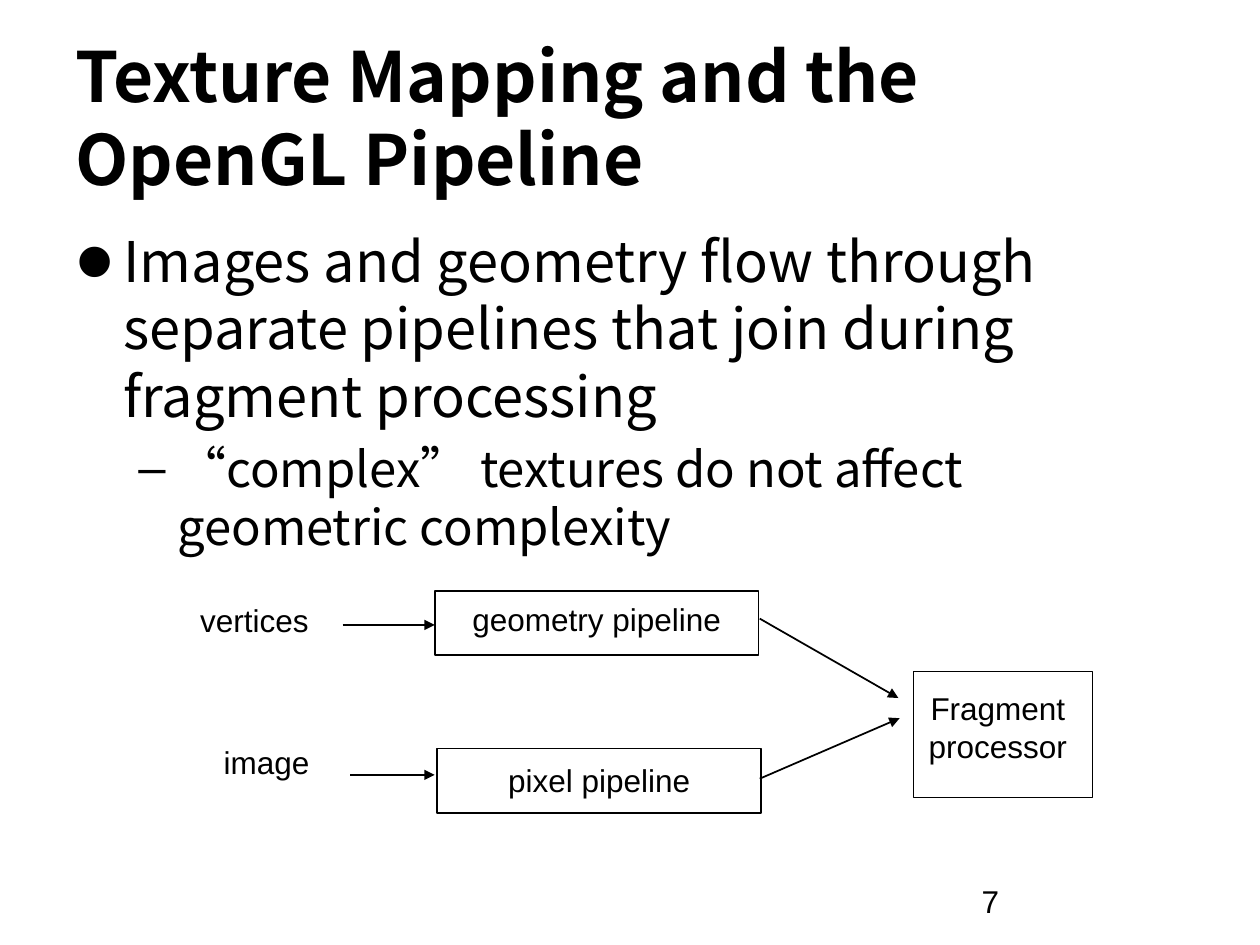
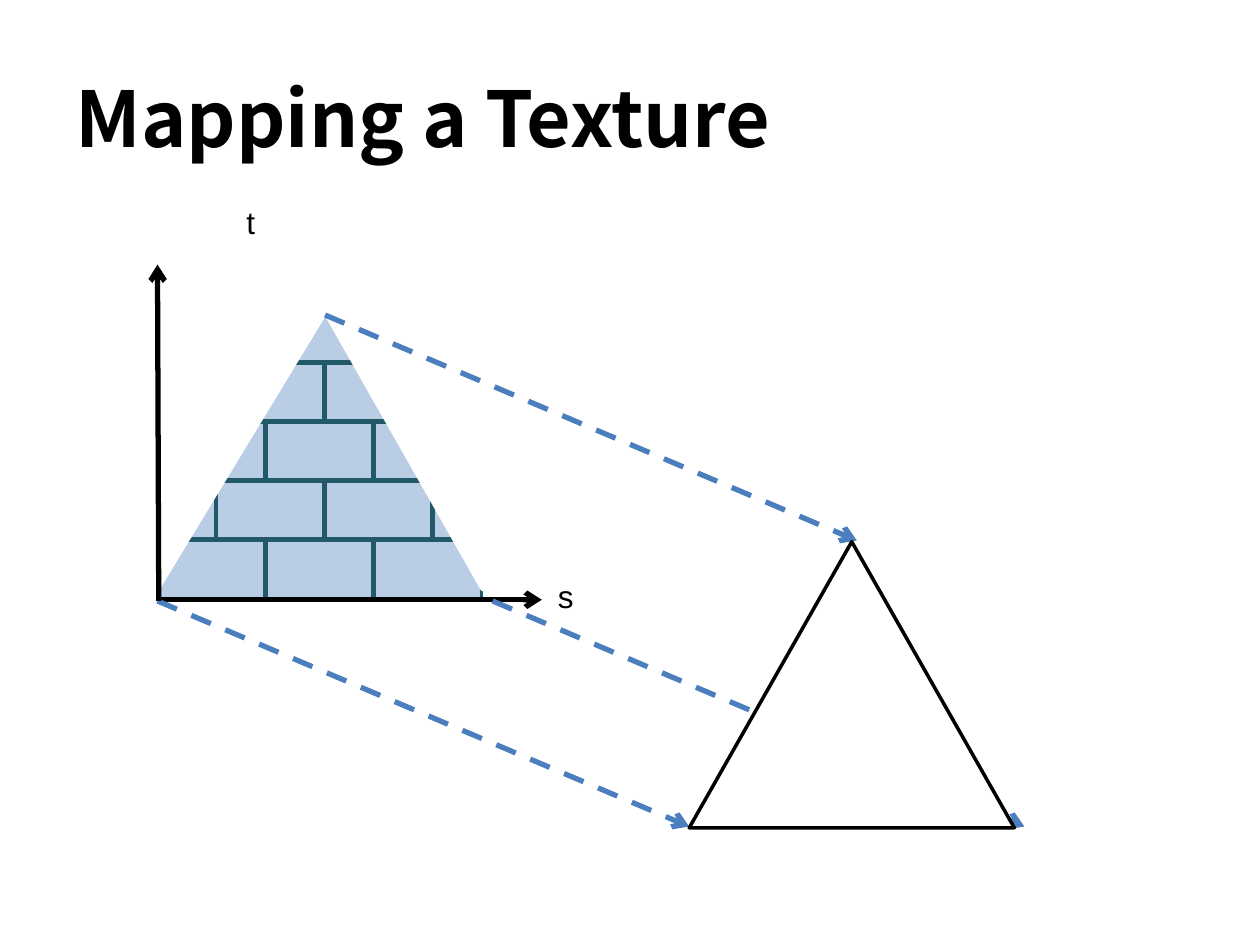
from lxml.etree import SubElement
from pptx import Presentation
from pptx.dml.color import RGBColor
from pptx.enum.dml import MSO_LINE
from pptx.enum.shapes import MSO_CONNECTOR, MSO_SHAPE
from pptx.enum.text import MSO_ANCHOR, MSO_AUTO_SIZE, PP_ALIGN
from pptx.oxml.ns import qn
from pptx.util import Inches, Pt

BLACK, WHITE = "000000", "FFFFFF"
BRICK, JOINT, DASH = "B9CDE5", "215968", "4B7EBC"
HEAD, PLAIN = "Noto Sans CJK SC", "Arial"
WIDE, HIGH = 10, 7.5

TITLES = [("Texture Mapping and the OpenGL Pipeline", 39.6),
          ("Mapping a Texture", 44)]
POINTS = [
    ("Images and geometry flow through separate pipelines "
     "that join during fragment processing", 32, 0.38, 0.38, "•", 200),
    ("“complex” textures do not affect geometric complexity",
     28, 0.81, 0.31, "–", 100),
]
BOXES = [(7.25, 5.33, 1.42, 1), (3.45, 4.69, 2.57, 0.51),
         (3.47, 5.94, 2.57, 0.51)]
LABELS = [("geometry pipeline", (3.43, 4.71, 2.61, 0.5)),
          ("vertices", (1.4, 4.72, 1.24, 0.5)),
          ("pixel pipeline", (3.47, 5.99, 2.57, 0.5)),
          ("image", (1.61, 5.85, 1.01, 0.5)),
          ("Fragment processor", (7.17, 5.42, 1.5, 0.71))]
FLOWS = [(6.03, 4.91, 7.13, 5.54), (6.03, 6.18, 7.14, 5.7),
         (2.72, 4.96, 3.45, 4.96), (2.78, 6.15, 3.45, 6.15)]

LEFT, TOP, RIGHT = 1.25, 2.41, 3.83
PITCH, SPAN, GAP, ROWS = 0.47, 0.86, 0.01, 5
EVEN = [LEFT + SPAN * i for i in range(4)]
ODD = [LEFT] + [LEFT + PITCH + SPAN * i for i in range(3)] + [RIGHT + GAP]
AXES = [(1.25, 4.76, 4.3, 4.76), (1.26, 4.77, 1.25, 2.1)]
AXIS_TAGS = [("s", (4.14, 4.53, 0.7, 0.51)), ("t", (1.64, 1.56, 0.7, 0.51))]
CORNERS = [(1.25, 4.77), (3.91, 4.77), (2.58, 2.5)]
SHIFT = (4.22, 1.79)
MASKS = [((2.5, 2.34, 1.33, 2.34), False), ((1.25, 2.34, 1.42, 2.34), True)]
TARGET = (5.47, 4.3, 2.58, 2.27)


def color(code):
    return RGBColor.from_string(code)


def place(box):
    return [Inches(v) for v in box]


def write(para, text, size, face=PLAIN, bold=False):
    run = para.add_run()
    run.text = text
    font = run.font
    font.size, font.name, font.bold = Pt(size), face, bold
    font.color.rgb = color(BLACK)
    SubElement(font._element, qn("a:ea"), typeface=face)
    return run


def shade(run):
    props = run.font._element
    glow = props.makeelement(qn("a:effectLst"), {})
    props.find(qn("a:solidFill")).addnext(glow)
    cast = SubElement(glow, qn("a:outerShdw"), blurRad="38100",
                      dist="38100", dir="2700000", algn="tl")
    tone = SubElement(cast, qn("a:srgbClr"), val=BLACK)
    SubElement(tone, qn("a:alpha"), val="43000")


def start(deck, text, size):
    slide = deck.slides.add_slide(deck.slide_layouts[5])
    title = slide.shapes.title
    title.left, title.top, title.width, title.height = place(
        (0.5, 0.3, 7.18, 1.25))
    frame = title.text_frame
    frame.word_wrap, frame.auto_size = True, MSO_AUTO_SIZE.NONE
    frame.vertical_anchor = MSO_ANCHOR.MIDDLE
    para = frame.paragraphs[0]
    para.alignment = PP_ALIGN.LEFT
    shade(write(para, text, size, HEAD, True))
    return slide


def shape(slide, kind, box, fill, line, width):
    item = slide.shapes.add_shape(kind, *place(box))
    item.shadow.inherit = False
    item.fill.solid()
    item.fill.fore_color.rgb = color(fill)
    item.line.color.rgb = color(line)
    item.line.width = Pt(width)
    return item


def label(slide, text, box):
    frame = slide.shapes.add_textbox(*place(box)).text_frame
    frame.word_wrap = True
    para = frame.paragraphs[0]
    para.alignment = PP_ALIGN.CENTER
    write(para, text, 18)


def arrow(slide, ends, hue=BLACK, width=1, tip="triangle", dash=False):
    item = slide.shapes.add_connector(MSO_CONNECTOR.STRAIGHT, *place(ends))
    item.line.color.rgb = color(hue)
    item.line.width = Pt(width)
    if dash:
        item.line.dash_style = MSO_LINE.DASH
    SubElement(item.line._get_or_add_ln(), qn("a:tailEnd"), type=tip)
    SubElement(item._element.spPr, qn("a:effectLst"))


def bullets(slide):
    frame = slide.shapes.add_textbox(*place((0.5, 1.75, 9, 2.9))).text_frame
    frame.word_wrap = True
    for i, (text, size, left, hang, mark, scale) in enumerate(POINTS):
        para = frame.add_paragraph() if i else frame.paragraphs[0]
        props = para._p.get_or_add_pPr()
        props.set("marL", str(Inches(left)))
        props.set("indent", str(-Inches(hang)))
        SubElement(props, qn("a:buSzPct"), val=str(scale * 1000))
        SubElement(props, qn("a:buFont"), typeface=PLAIN)
        SubElement(props, qn("a:buChar"), char=mark)
        if i:
            para.space_before = Pt(size * 0.2)
        write(para, text, size, HEAD)


def number(slide, text):
    frame = slide.shapes.add_textbox(
        *place((7.17, 6.95, 2.33, 0.4))).text_frame
    frame.vertical_anchor = MSO_ANCHOR.MIDDLE
    frame.margin_left = Inches(0.62)
    write(frame.paragraphs[0], text, 18)


def flow(deck):
    slide = start(deck, *TITLES[0])
    bullets(slide)
    number(slide, "7")
    for box in BOXES:
        shape(slide, MSO_SHAPE.RECTANGLE, box, WHITE, BLACK, 1)
    for text, box in LABELS:
        label(slide, text, box)
    for ends in FLOWS:
        arrow(slide, ends)


def wall(slide):
    for row in range(ROWS):
        edges = ODD if row % 2 else EVEN
        for x, end in zip(edges, edges[1:]):
            box = (x, TOP + PITCH * row, end - x - GAP, PITCH - GAP)
            shape(slide, MSO_SHAPE.RECTANGLE, box, BRICK, JOINT, 2)


def texture(deck):
    slide = start(deck, *TITLES[1])
    wall(slide)
    arrow(slide, AXES[0], width=3, tip="arrow")
    for text, box in AXIS_TAGS:
        label(slide, text, box)
    rays = [(x, y, x + SHIFT[0], y + SHIFT[1]) for x, y in CORNERS]
    for ray in rays[:2]:
        arrow(slide, ray, DASH, 3, "arrow", True)
    for box, flip in MASKS:
        mask = shape(slide, MSO_SHAPE.RIGHT_TRIANGLE, box, WHITE, WHITE, 2)
        mask.rotation = 180
        if flip:
            mask._element.spPr.xfrm.set("flipH", "1")
    arrow(slide, AXES[1], width=3, tip="arrow")
    arrow(slide, rays[2], DASH, 3, "arrow", True)
    shape(slide, MSO_SHAPE.ISOSCELES_TRIANGLE, TARGET, WHITE, BLACK, 2)


def main():
    deck = Presentation()
    deck.slide_width, deck.slide_height = Inches(WIDE), Inches(HIGH)
    flow(deck)
    texture(deck)
    deck.save("out.pptx")


if __name__ == "__main__":
    main()
